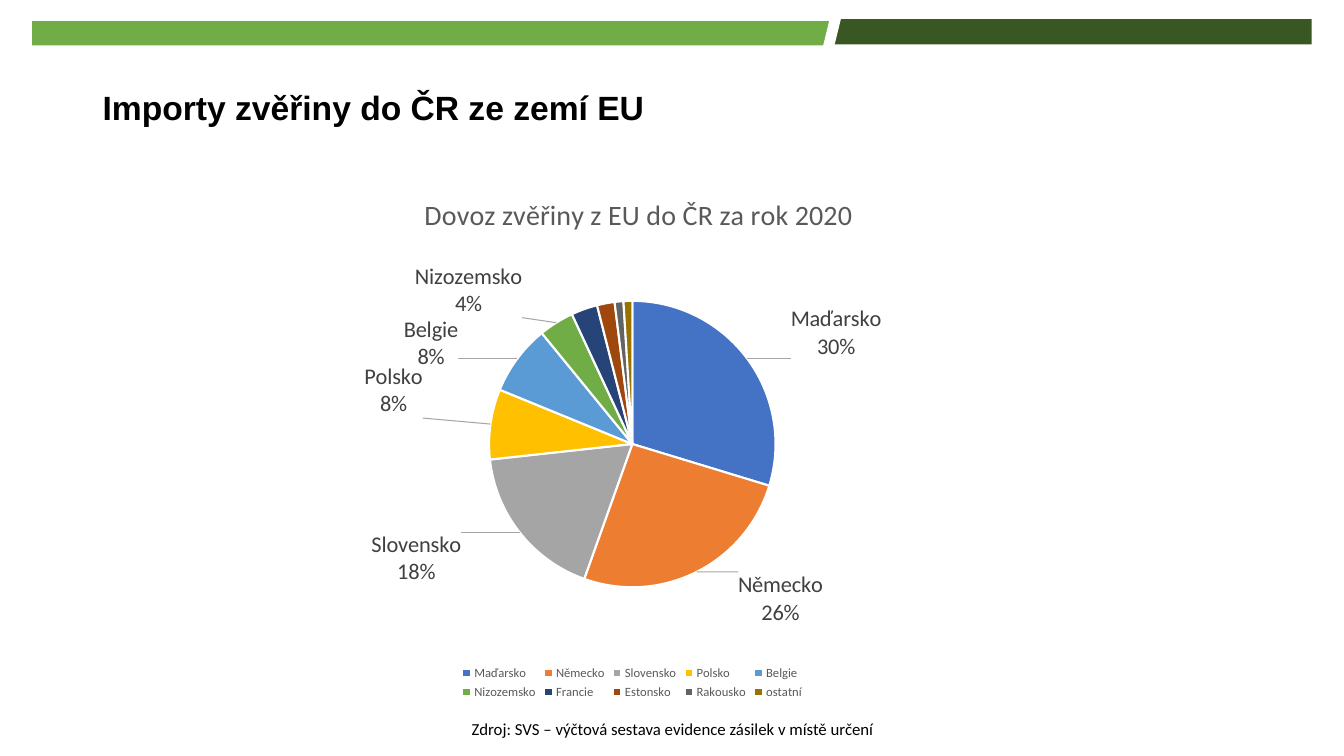
from lxml import etree
from pptx import Presentation
from pptx.chart.data import CategoryChartData
from pptx.dml.color import RGBColor
from pptx.enum.chart import XL_CHART_TYPE, XL_LEGEND_POSITION
from pptx.enum.shapes import MSO_SHAPE
from pptx.enum.text import MSO_ANCHOR
from pptx.util import Inches, Pt

RECT, SLANT = MSO_SHAPE.RECTANGLE, MSO_SHAPE.PARALLELOGRAM
PIE, BOTTOM = XL_CHART_TYPE.PIE, XL_LEGEND_POSITION.BOTTOM
TOP, MIDDLE = MSO_ANCHOR.TOP, MSO_ANCHOR.MIDDLE
C = "http://schemas.openxmlformats.org/drawingml/2006/chart"
A = "http://schemas.openxmlformats.org/drawingml/2006/main"

# country, share, slice colour, label offset as a fraction of the chart
IMPORTS = [
    ("Maďarsko", 30, "4472C4", (0.05, 0.01)),
    ("Německo", 26, "ED7D31", (0.05, -0.01)),
    ("Slovensko", 18, "A5A5A5", (-0.07, -0.01)),
    ("Polsko", 8, "FFC000", (-0.08, -0.01)),
    ("Belgie", 8, "5B9BD5", (-0.07, 0.03)),
    ("Nizozemsko", 4, "70AD47", (-0.04, 0)),
    ("Francie", 3, "264478", None),
    ("Estonsko", 2, "9E480E", None),
    ("Rakousko", 1, "636363", None),
    ("ostatní", 1, "997300", None),
]


def rgb(value):
    return RGBColor.from_string(value)


def layout_xml(x, y, w=None, h=None, mode="edge", inner=False):
    parts = '<c:layoutTarget val="inner"/>' if inner else ""
    if mode == "edge":
        parts += '<c:xMode val="edge"/><c:yMode val="edge"/>'
    for tag, value in (("x", x), ("y", y), ("w", w), ("h", h)):
        if value is not None:
            parts += f'<c:{tag} val="{value}"/>'
    return f"<c:layout><c:manualLayout>{parts}</c:manualLayout></c:layout>"


def element(xml):
    """Parse chart XML that uses the c: and a: prefixes."""
    root = f'<r xmlns:c="{C}" xmlns:a="{A}">{xml}</r>'
    return etree.fromstring(root)[0]


def place(parent, index, **box):
    for old in parent.findall(f"{{{C}}}layout"):
        parent.remove(old)
    parent.insert(index, element(layout_xml(**box)))


class Slide:
    font = "Calibri"
    ink, grey, label_ink = "000000", "595959", "404040"

    def __init__(self, prs):
        self.s = prs.slides.add_slide(prs.slide_layouts[6])

    def style(self, font, **fmt):
        color = fmt.pop("color", self.ink)
        for key, value in {"name": self.font, **fmt}.items():
            setattr(font, key, value)
        font.color.rgb = rgb(color)

    def shape(self, kind, box, fill, adj=None):
        sp = self.s.shapes.add_shape(kind, *map(Inches, box))
        sp.shadow.inherit = False
        sp.fill.solid()
        sp.fill.fore_color.rgb = rgb(fill)
        sp.line.fill.background()
        if adj is not None:
            sp.adjustments[0] = adj

    def text(self, box, text, anchor=TOP, wrap=True, spacing=1.0, **fmt):
        tf = self.s.shapes.add_textbox(*map(Inches, box)).text_frame
        tf.word_wrap, tf.vertical_anchor = wrap, anchor
        p = tf.paragraphs[0]
        p.line_spacing = spacing
        r = p.add_run()
        r.text = text
        self.style(r.font, **fmt)

    def pie_labels(self, rows):
        show = (f'<c:numFmt formatCode="0%" sourceLinked="0"/>'
                f'<c:spPr><a:noFill/><a:ln><a:noFill/></a:ln></c:spPr>'
                f'<c:txPr><a:bodyPr/><a:p><a:pPr><a:defRPr sz="1600" b="0">'
                f'<a:solidFill><a:srgbClr val="{self.label_ink}"/></a:solidFill>'
                f'<a:latin typeface="{self.font}"/></a:defRPr></a:pPr></a:p></c:txPr>'
                '<c:dLblPos val="outEnd"/>')
        flags = (("LegendKey", 0), ("Val", 0), ("CatName", 1),
                 ("SerName", 0), ("Percent", 1), ("BubbleSize", 0))
        show += "".join(f'<c:show{name} val="{on}"/>' for name, on in flags)
        show += "<c:separator>\n</c:separator>"
        labels = ""
        for i, (_, _, _, offset) in enumerate(rows):
            body = '<c:delete val="1"/>'
            if offset:
                body = layout_xml(*offset, mode="factor") + show
            labels += f'<c:dLbl><c:idx val="{i}"/>{body}</c:dLbl>'
        leader = ('<c:showLeaderLines val="1"/><c:leaderLines><c:spPr><a:ln w="9525">'
                  '<a:solidFill><a:srgbClr val="A6A6A6"/></a:solidFill>'
                  '</a:ln></c:spPr></c:leaderLines>')
        return element(f"<c:dLbls>{labels}{show}{leader}</c:dLbls>")

    def pie(self, box, title, rows):
        data = CategoryChartData(number_format="#,##0")
        data.categories = [row[0] for row in rows]
        data.add_series("Series 1", [row[1] for row in rows])
        chart = self.s.shapes.add_chart(PIE, *map(Inches, box), data).chart
        self.style(chart.font, size=Pt(10))

        # Title
        tf = chart.chart_title.text_frame
        tf.text = title
        self.style(tf.paragraphs[0].runs[0].font, size=Pt(20), bold=False, color=self.grey)
        chart.chart_title.include_in_layout = False
        place(chart._chartSpace.find(f".//{{{C}}}title"), 1, x=0.22, y=0.02)

        # Slices
        plot = chart.plots[0]
        plot.vary_by_categories = True
        series = plot.series[0]
        for i, (_, _, color, _) in enumerate(rows):
            fmt = series.points[i].format
            fmt.fill.solid()
            fmt.fill.fore_color.rgb = rgb(color)
            fmt.line.color.rgb = rgb("FFFFFF")
            fmt.line.width = Pt(1.5)
        series._element.find(f"{{{C}}}cat").addprevious(self.pie_labels(rows))
        place(chart._chartSpace.find(f".//{{{C}}}plotArea"), 0,
              x=0.31, y=0.23, w=0.37, h=0.55, inner=True)

        # Legend
        chart.has_legend = True
        legend = chart.legend
        legend.position, legend.include_in_layout = BOTTOM, False
        self.style(legend.font, size=Pt(9), color=self.grey)
        place(legend._element, 1, x=0.27, y=0.92, w=0.45, h=0.08)


def main():
    prs = Presentation()
    prs.slide_width, prs.slide_height = Inches(13.33), Inches(7.5)
    slide = Slide(prs)

    # Header band
    slide.shape(RECT, (0.32, 0.21, 7.94, 0.24), "70AD47")
    slide.shape(RECT, (8.25, 0.19, 4.76, 0.25), "385723")
    slide.shape(SLANT, (8.16, 0.19, 0.18, 0.28), "FFFFFF", adj=0.38)

    # Title, chart and source note
    slide.text((0.92, 0.64, 11.5, 0.9), "Importy zvěřiny do ČR ze zemí EU", anchor=MIDDLE,
               spacing=0.9, name="Arial", size=Pt(24), bold=True)
    slide.pie((2.47, 1.78, 7.68, 5.2), "Dovoz zvěřiny z EU do ČR za rok 2020", IMPORTS)
    slide.text((4.58, 7.08, 4.24, 0.3),
               "Zdroj: SVS – výčtová sestava evidence zásilek v místě určení",
               wrap=False, size=Pt(12))
    prs.save("out.pptx")


if __name__ == "__main__":
    main()
